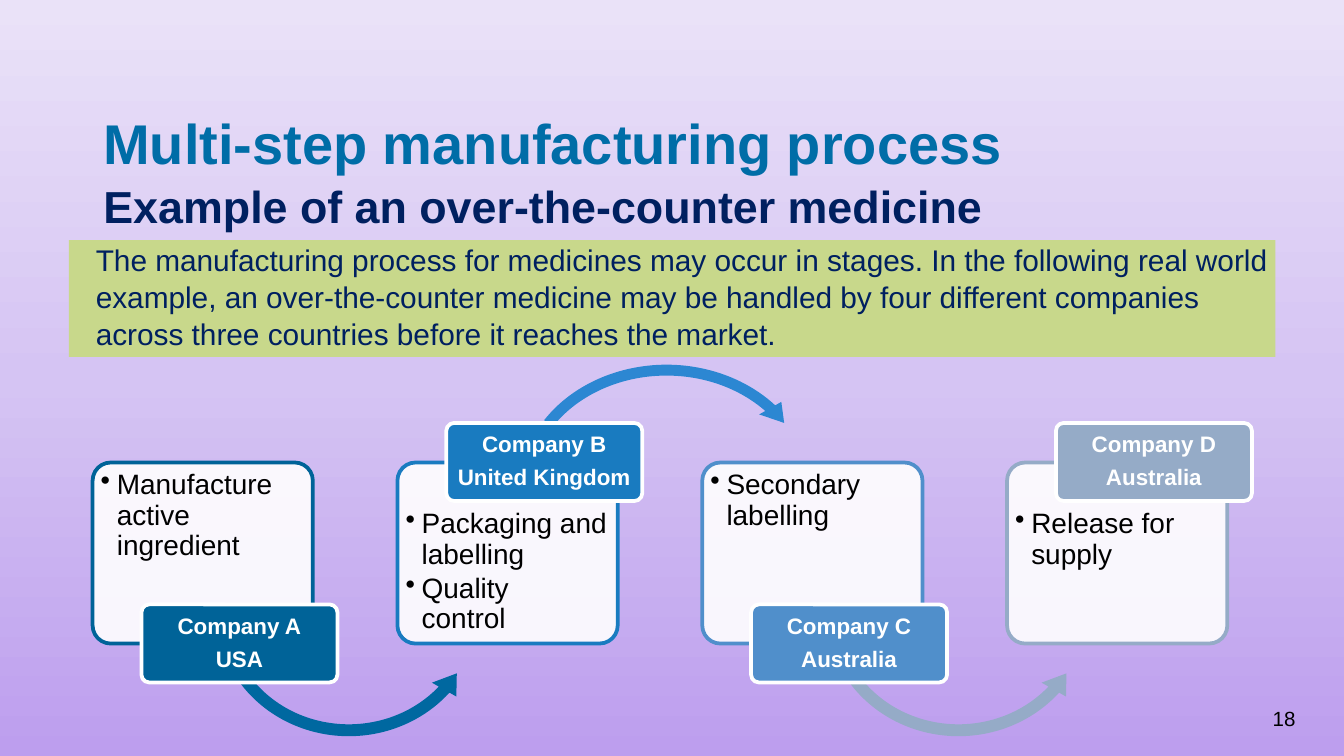
"""Build a slide on the multi-step manufacturing process of a medicine."""
from copy import deepcopy

from lxml.etree import SubElement
from pptx import Presentation
from pptx.dml.color import RGBColor
from pptx.enum.shapes import MSO_SHAPE as Preset
from pptx.enum.text import MSO_ANCHOR as Anchor, MSO_AUTO_SIZE as AutoSize, PP_ALIGN as Align
from pptx.oxml.ns import qn
from pptx.util import Pt

WHITE = RGBColor(0xFF, 0xFF, 0xFF)
BLACK = RGBColor(0x00, 0x00, 0x00)
TITLE_BLUE = RGBColor(0x00, 0x6D, 0xA7)
NAVY = RGBColor(0x00, 0x20, 0x60)
LIME = RGBColor(0xC8, 0xD8, 0x8B)
DEEP_BLUE = RGBColor(0x00, 0x63, 0x98)
ARROW_DEEP_BLUE = RGBColor(0x00, 0x68, 0xA0)
BLUE = RGBColor(0x19, 0x7B, 0xC0)
ARROW_BLUE = RGBColor(0x2C, 0x87, 0xD2)
MID_BLUE = RGBColor(0x50, 0x8F, 0xCB)
GREY_BLUE = RGBColor(0x95, 0xAB, 0xC7)
BACKGROUND = (
    (0, RGBColor(0xBD, 0x9E, 0xEE)),
    (0.5, RGBColor(0xD5, 0xC4, 0xF3)),
    (1, RGBColor(0xEA, 0xE2, 0xF8)),
)

STEPS = (
    (["Manufacture active ingredient"], "Company A", "USA", DEEP_BLUE, ARROW_DEEP_BLUE),
    (["Packaging and labelling", "Quality\vcontrol"], "Company B", "United Kingdom", BLUE, ARROW_BLUE),
    (["Secondary labelling"], "Company C", "Australia", MID_BLUE, GREY_BLUE),
    (["Release for supply"], "Company D", "Australia", GREY_BLUE, None),
)
FIRST_LEFT, STEP_PITCH = 49.6, 163.3


class SlideBuilder:
    """Hold the style and the current slide."""

    font_name = "Arial"
    line_width = 2
    bullet_indent = 8.64

    def __init__(self, presentation):
        self.slide = presentation.slides.add_slide(presentation.slide_layouts[1])

    def background(self, stops):
        fill = self.slide.background.fill
        fill.gradient()
        fill.gradient_angle = 90
        stop_list = self.slide.element.find(".//" + qn("a:gsLst"))
        stop_list.insert(1, deepcopy(stop_list[0]))
        for stop, (position, color) in zip(fill.gradient_stops, stops):
            stop.position = position
            stop.color.rgb = color

    def place(self, shape, left, top, width, height):
        shape.left, shape.top, shape.width, shape.height = map(Pt, (left, top, width, height))

    def frame(self, shape, insets=(0, 0, 0, 0), anchor=Anchor.TOP):
        frame = shape.text_frame
        frame.word_wrap = True
        frame.auto_size = AutoSize.NONE
        frame.vertical_anchor = anchor
        frame.margin_left, frame.margin_top, frame.margin_right, frame.margin_bottom = map(Pt, insets)
        return frame

    def font(self, target, size, color, bold=False):
        target.font.name = self.font_name
        target.font.size = Pt(size)
        target.font.bold = bold
        target.font.color.rgb = color

    def paragraphs(self, frame, lines, size, color, bold=False, align=Align.LEFT,
                   spacing=1, after=0, bullet=False, indent=0):
        for index, line in enumerate(lines):
            paragraph = frame.paragraphs[0] if index == 0 else frame.add_paragraph()
            paragraph.text = line
            paragraph.alignment = align
            paragraph.line_spacing = spacing
            paragraph.space_before = Pt(0)
            paragraph.space_after = Pt(after)
            properties = paragraph._p.get_or_add_pPr()
            properties.set("marL", str(Pt(self.bullet_indent if bullet else indent)))
            properties.set("indent", str(Pt(-self.bullet_indent if bullet else 0)))
            if bullet:
                SubElement(properties, qn("a:buChar")).set("char", "•")
            else:
                SubElement(properties, qn("a:buNone"))
            self.font(paragraph, size, color, bold)

    def title(self, heading, subheading):
        shape = self.slide.shapes.title
        self.place(shape, 55.4, 55.4, 652.3, 42.5)
        paragraph = self.frame(shape).paragraphs[0]
        paragraph.alignment = Align.LEFT
        paragraph.line_spacing = 1.07
        run = paragraph.add_run()
        run.text = heading
        self.font(run, 30, TITLE_BLUE, True)
        paragraph.add_line_break()
        run = paragraph.add_run()
        run.text = subheading
        self.font(run, 24, NAVY, True)

    def body(self, text):
        shape = self.slide.placeholders[1]
        self.place(shape, 36.9, 128.7, 646.4, 62.5)
        shape.fill.solid()
        shape.fill.fore_color.rgb = LIME
        self.paragraphs(self.frame(shape), [text], 16, NAVY, spacing=1.04, indent=14.4)

    def page_number(self, number):
        shape = self.slide.shapes.add_textbox(Pt(518.4), Pt(378), Pt(175.7), Pt(21.6))
        self.paragraphs(self.frame(shape), [number], 11, BLACK, align=Align.RIGHT)

    def shape(self, preset, left, top, width, height, fill, line=None):
        shape = self.slide.shapes.add_shape(preset, Pt(left), Pt(top), Pt(width), Pt(height))
        shape.shadow.inherit = False
        shape.fill.solid()
        shape.fill.fore_color.rgb = fill
        if line is None:
            shape.line.fill.background()
        else:
            shape.line.color.rgb = line
            shape.line.width = Pt(self.line_width)
        return shape

    def box(self, left, bullets, color, label_on_top):
        shape = self.shape(Preset.ROUNDED_RECTANGLE, left, 247.8, 118, 97, WHITE, color)
        shape.adjustments[0] = 0.1
        fill_color = shape.element.spPr.find(qn("a:solidFill"))[0]
        SubElement(fill_color, qn("a:alpha")).set("val", "90000")
        insets = (1.5, 22.4, 1.5, 1.5) if label_on_top else (1.5, 1.5, 1.5, 22.4)
        self.paragraphs(self.frame(shape, insets), bullets, 15, BLACK,
                        spacing=0.9, after=2.25, bullet=True)

    def arrow(self, left, color, over):
        if over:
            shape = self.shape(Preset.CIRCULAR_ARROW, left + 61.4, 191.5, 165.6, 141.8, color)
            thickness, head_angle, end, start, head = 4.1, 8.6, 321.81, 209.59, 4.8
        else:
            shape = self.shape(Preset.LEFT_CIRCULAR_ARROW, left + 62, 257, 150.5, 141.8, color)
            thickness, head_angle, end, start, head = 4.5, 9.55, 39.15, 150.41, 5.3
        values = (thickness / 100, head_angle * 0.6, end * 0.6, start * 0.6, head / 100)
        for index, value in enumerate(values):
            shape.adjustments[index] = value

    def label(self, left, lines, color, on_top):
        top = 226.6 if on_top else 323.8
        shape = self.shape(Preset.ROUNDED_RECTANGLE, left + 26.2, top, 105, 41.8, color, WHITE)
        shape.adjustments[0] = 0.1
        frame = self.frame(shape, (1.7, 1, 1.7, 1), Anchor.MIDDLE)
        self.paragraphs(frame, lines, 12, WHITE, True, Align.CENTER, spacing=0.9, after=4.7)


def main():
    presentation = Presentation()
    presentation.slide_width, presentation.slide_height = Pt(720), Pt(405)
    builder = SlideBuilder(presentation)
    builder.background(BACKGROUND)
    builder.title("Multi-step manufacturing process", "Example of an over-the-counter medicine")
    builder.body(
        "The manufacturing process for medicines may occur in stages. In the following real world "
        "example, an over-the-counter medicine may be handled by four different companies "
        "across three countries before it reaches the market."
    )
    builder.page_number("18")
    for index, (bullets, company, country, color, arrow_color) in enumerate(STEPS):
        left = FIRST_LEFT + index * STEP_PITCH
        on_top = index % 2 == 1
        builder.box(left, bullets, color, on_top)
        if arrow_color is not None:
            builder.arrow(left, arrow_color, on_top)
        builder.label(left, [company, country], color, on_top)
    presentation.save("out.pptx")


if __name__ == "__main__":
    main()
